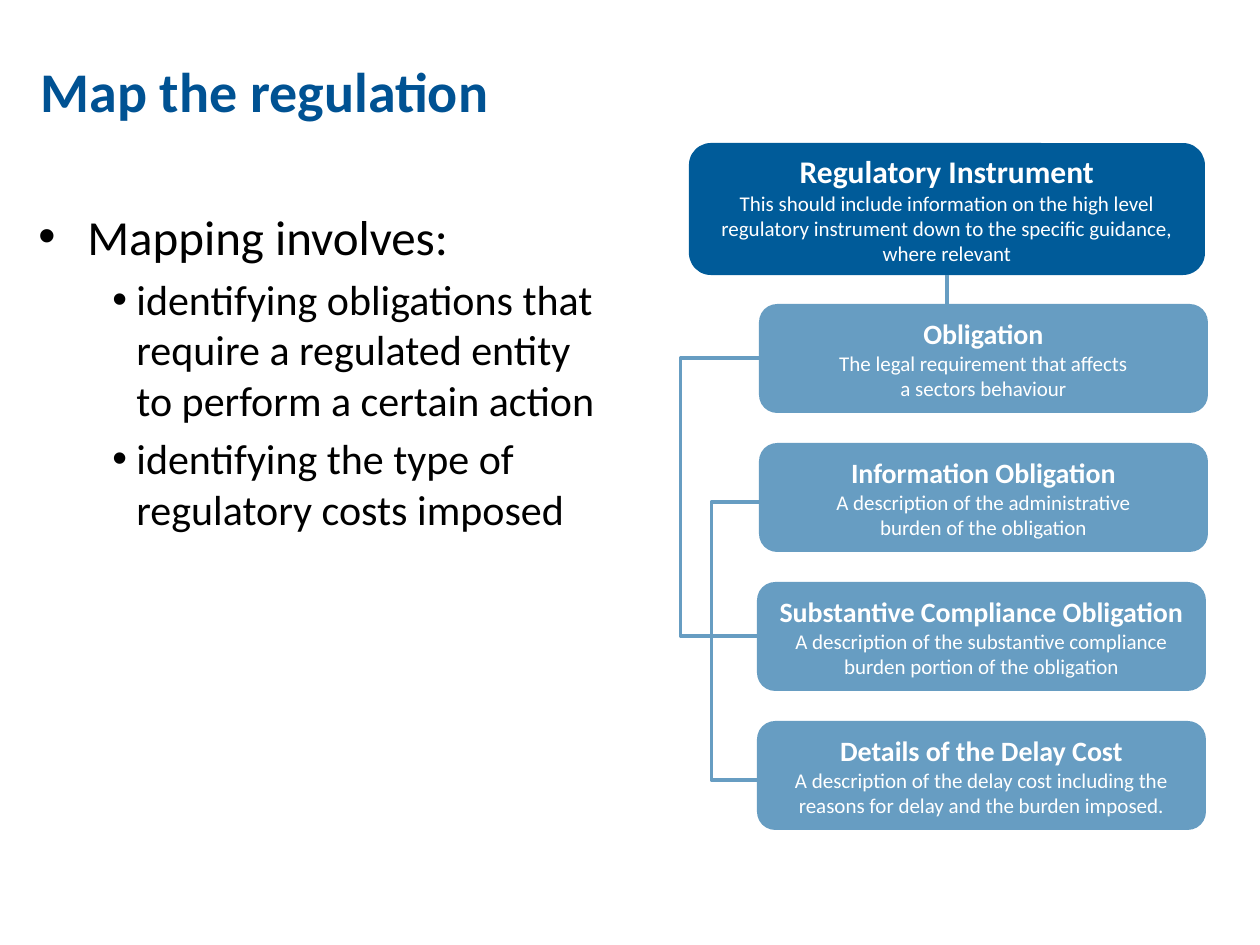
from dataclasses import dataclass

from lxml.etree import SubElement
from pptx import Presentation
from pptx.dml.color import RGBColor
from pptx.enum.shapes import MSO_CONNECTOR, MSO_SHAPE
from pptx.enum.text import MSO_ANCHOR, PP_ALIGN
from pptx.oxml.ns import qn
from pptx.util import Pt


@dataclass(frozen=True)
class Theme:
    font: str = "Calibri"
    title: str = "005293"
    text: str = "000000"
    white: str = "FFFFFF"
    dark: str = "005B99"
    light: str = "679DC2"
    title_size: int = 32
    bullet_sizes: tuple = (28, 24)
    instrument_size: int = 18
    heading_size: int = 16
    detail_size: int = 12
    line_width: int = 2


def px(length):
    return round(length * 914400 / 126)


class SlideBuilder:
    def __init__(self, slide, theme):
        self.slide = slide
        self.theme = theme

    def style(self, paragraph, size, color, bold=False):
        for run in paragraph.runs:
            run.font.name = self.theme.font
            run.font.size = Pt(size)
            run.font.bold = bold
            run.font.color.rgb = RGBColor.from_string(color)

    def title(self, text, left, top, width, height):
        shape = self.slide.shapes.title
        shape.left, shape.top, shape.width, shape.height = map(px, (left, top, width, height))
        frame = shape.text_frame
        frame.text = text
        frame.vertical_anchor = MSO_ANCHOR.TOP
        paragraph = frame.paragraphs[0]
        paragraph.alignment = PP_ALIGN.LEFT
        self.style(paragraph, self.theme.title_size, self.theme.title, True)

    def bullets(self, items, left, top, width, height):
        shape = self.slide.shapes.add_textbox(*map(px, (left, top, width, height)))
        frame = shape.text_frame
        frame.word_wrap = True
        frame.text = "\n".join(text for _, text in items)
        indents = ((49, 49), (98, 24))
        for index, (level, _) in enumerate(items):
            paragraph = frame.paragraphs[index]
            paragraph.level = level
            size = self.theme.bullet_sizes[level]
            margin, hanging = indents[level]
            properties = paragraph._p.get_or_add_pPr()
            properties.set("marL", str(px(margin)))
            properties.set("indent", str(-px(hanging)))
            SubElement(properties, qn("a:buFont"), typeface="Arial")
            SubElement(properties, qn("a:buChar"), char="•")
            paragraph.space_before = Pt(0.2 * size if index else 0)
            self.style(paragraph, size, self.theme.text)

    def box(self, heading, detail, left, top, width, height, fill, heading_size):
        shape = self.slide.shapes.add_shape(
            MSO_SHAPE.ROUNDED_RECTANGLE, *map(px, (left, top, width, height)))
        shape.shadow.inherit = False
        shape.fill.solid()
        shape.fill.fore_color.rgb = RGBColor.from_string(fill)
        shape.line.fill.background()
        frame = shape.text_frame
        frame.word_wrap = True
        frame.vertical_anchor = MSO_ANCHOR.MIDDLE
        frame.text = f"{heading}\n{detail}"
        for paragraph in frame.paragraphs:
            paragraph.alignment = PP_ALIGN.CENTER
        self.style(frame.paragraphs[0], heading_size, self.theme.white, True)
        self.style(frame.paragraphs[1], self.theme.detail_size, self.theme.white)

    def connector(self, kind, start_x, start_y, end_x, end_y):
        connector = self.slide.shapes.add_connector(
            kind, *map(px, (start_x, start_y, end_x, end_y)))
        connector.line.color.rgb = RGBColor.from_string(self.theme.light)
        connector.line.width = Pt(self.theme.line_width)
        SubElement(connector._element.spPr, qn("a:effectLst"))
        return connector

    def elbow(self, start_x, start_y, end_x, end_y, bend_x):
        connector = self.connector(MSO_CONNECTOR.ELBOW, start_x, start_y, end_x, end_y)
        adjustment = round(100000 * (bend_x - start_x) / (end_x - start_x))
        adjustments = connector._element.spPr.find(qn("a:prstGeom")).get_or_add_avLst()
        SubElement(adjustments, qn("a:gd"), name="adj1", fmla=f"val {adjustment}")


BULLETS = [
    (0, "Mapping involves:"),
    (1, "identifying obligations that require a regulated entity to perform a certain action"),
    (1, "identifying the type of regulatory costs imposed"),
]

OBLIGATIONS = [
    (759, "Obligation", "The legal requirement that affects\va sectors behaviour"),
    (759, "Information Obligation",
     "A description of the administrative\vburden of the obligation"),
    (757, "Substantive Compliance Obligation",
     "A description of the substantive compliance burden portion of the obligation"),
    (757, "Details of the Delay Cost",
     "A description of the delay cost including the reasons for delay and the burden imposed."),
]


def main():
    presentation = Presentation()
    presentation.slide_width = px(1260)
    presentation.slide_height = px(945)
    slide = presentation.slides.add_slide(presentation.slide_layouts[5])
    theme = Theme()
    builder = SlideBuilder(slide, theme)

    builder.title("Map the regulation", 28, 50, 1193, 80)
    builder.bullets(BULLETS, 26, 200, 586, 653)
    builder.box(
        "Regulatory Instrument",
        "This should include information on the high level regulatory instrument "
        "down to the specific guidance, where relevant",
        689, 143, 516, 132, theme.dark, theme.instrument_size)

    first_top, step = 304, 139
    for row, (left, heading, detail) in enumerate(OBLIGATIONS):
        builder.box(heading, detail, left, first_top + row * step, 449, 109,
                    theme.light, theme.heading_size)

    for start_y, bend_x in ((358, 680), (502, 711)):
        builder.elbow(759, start_y, 757, start_y + 2 * step, bend_x)
    builder.connector(MSO_CONNECTOR.STRAIGHT, 947, 275, 947, first_top)

    presentation.save("out.pptx")


if __name__ == "__main__":
    main()
